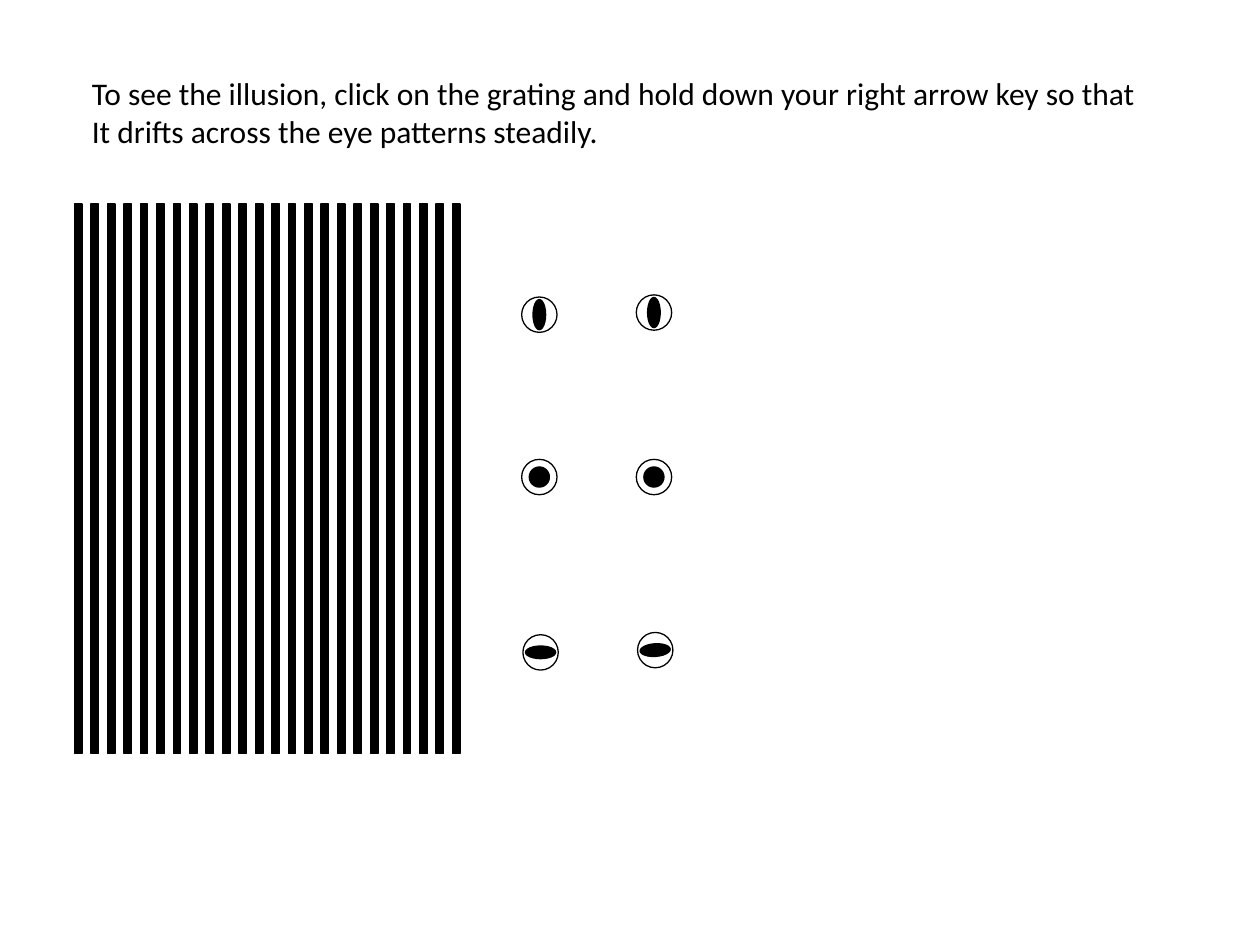
from pptx import Presentation
from pptx.dml.color import RGBColor
from pptx.enum import shapes, text
from pptx.util import Pt

COLORS = {"ink": "000000"}
INK = RGBColor.from_string(COLORS["ink"])
RECT, OVAL = shapes.MSO_SHAPE.RECTANGLE, shapes.MSO_SHAPE.OVAL


def add_centred(group, kind, x, y, width, height, rotation=0, filled=True, outlined=True):
    """Add a black shape centred on (x, y), in points."""
    shape = group.shapes.add_shape(
        kind, Pt(x - width / 2), Pt(y - height / 2), Pt(width), Pt(height))
    shape.rotation = rotation
    shape.shadow.inherit = False
    if filled:
        shape.fill.solid()
        shape.fill.fore_color.rgb = INK
    else:
        shape.fill.background()
    if outlined:
        shape.line.color.rgb = INK
        shape.line.width = Pt(0.75)
    else:
        shape.line.fill.background()


def add_lines(page, lines, left, top, width, height, size, font):
    box = page.shapes.add_textbox(Pt(left), Pt(top), Pt(width), Pt(height))
    frame = box.text_frame
    frame.word_wrap = False
    frame.auto_size = text.MSO_AUTO_SIZE.SHAPE_TO_FIT_TEXT
    for number, line in enumerate(lines):
        para = frame.add_paragraph() if number else frame.paragraphs[0]
        span = para.add_run()
        span.text = line
        span.font.size = Pt(size)
        span.font.name = font
        span.font.color.rgb = INK


deck = Presentation()
deck.slide_width, deck.slide_height = Pt(720), Pt(540)
page = deck.slides.add_slide(deck.slide_layouts[6])

# Grating: 24 evenly spaced bars, turned upright
BARS, FIRST_X, LAST_X = 24, 44.75, 260.75
pitch = (LAST_X - FIRST_X) / (BARS - 1)
grating = page.shapes.add_group_shape()
for bar in range(BARS):
    add_centred(grating, RECT, LAST_X - bar * pitch, 273.6, 313.9, 4.3, rotation=90)

# Eyes: centre x and y, then pupil width, height, rotation and outline
EYES = [
    (308.2, 179.8, 18, 8, 270, False),
    (373.7, 178.6, 18, 8, 270, False),
    (308.9, 372.8, 18, 8, 0, False),
    (374.4, 371.5, 18, 8, 356.4, False),
    (308.2, 272.6, 11.5, 11.5, 0, True),
    (373.7, 272.6, 11.5, 11.5, 0, True),
]
eyes = page.shapes.add_group_shape()
for x, y, width, height, rotation, outlined in EYES:
    add_centred(eyes, OVAL, x, y, width, height, rotation=rotation, outlined=outlined)
    add_centred(eyes, OVAL, x, y, 20.2, 20.2, filled=False)

add_lines(
    page,
    ["To see the illusion, click on the grating and hold down your right arrow key so that",
     "It drifts across the eye patterns steadily."],
    left=45.4, top=38.9, width=620.6, height=51.1, size=18, font="Calibri")

deck.save("out.pptx")
